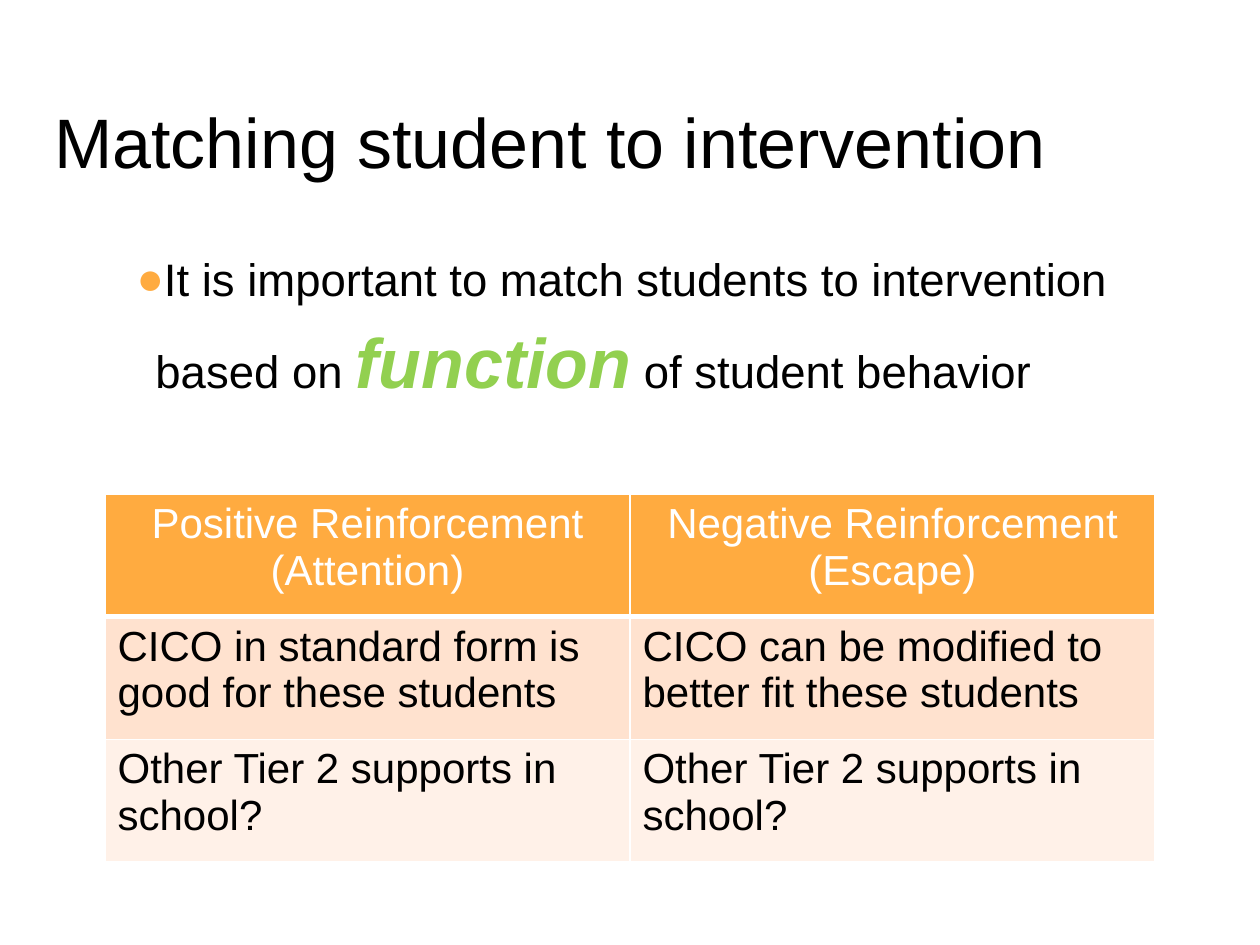
from typing import NamedTuple

from lxml.etree import SubElement
from pptx import Presentation
from pptx.dml.color import RGBColor
from pptx.enum.text import MSO_ANCHOR, MSO_AUTO_SIZE, PP_ALIGN
from pptx.oxml.ns import qn
from pptx.util import Inches, Pt

WIDE, HIGH = 10, 7.5
FONT = "Arial"
BLACK, WHITE, ORANGE, GREEN = "000000", "FFFFFF", "FFAB40", "92D050"
LEFT = 1 / 12


class Box(NamedTuple):
    left: float
    top: float
    width: float
    height: float


class Piece(NamedTuple):
    text: str
    size: float
    hue: str = BLACK
    strong: bool = False


class Band(NamedTuple):
    cells: tuple[str, str]
    fill: str
    hue: str
    align: PP_ALIGN
    base: float


TITLE = Box(0.033, 0.04, 0.917, 1 / 6)
BODY = Box(LEFT, 0.244, 0.85, 2 / 3)
GRID = Box(LEFT, 0.523, 1 - 2 * LEFT, 0.389)

POINT = (
    Piece("It is important to match students to intervention based on ", 26),
    Piece("function", 40, GREEN, True),
    Piece(" of student behavior", 26),
)
BANDS = (
    Band(("Positive Reinforcement (Attention)", "Negative Reinforcement (Escape)"),
         ORANGE, WHITE, PP_ALIGN.CENTER, 3),
    Band(("CICO in standard form is good for these students",
          "CICO can be modified to better fit these students"),
         "FFE2CF", BLACK, PP_ALIGN.LEFT, 1),
    Band(("Other Tier 2 supports in school?",) * 2,
         "FFF1E8", BLACK, PP_ALIGN.LEFT, 1),
)


def color(code: str) -> RGBColor:
    return RGBColor.from_string(code)


def frame(box: Box) -> tuple:
    return (Inches(box.left * WIDE), Inches(box.top * HIGH),
            Inches(box.width * WIDE), Inches(box.height * HIGH))


def write(para, pieces: tuple[Piece, ...]) -> None:
    for piece in pieces:
        run = para.add_run()
        run.text = piece.text
        font = run.font
        font.name, font.size = FONT, Pt(piece.size)
        font.bold = font.italic = piece.strong
        font.color.rgb = color(piece.hue)


def place(shape, box: Box, anchor: MSO_ANCHOR):
    shape.left, shape.top, shape.width, shape.height = frame(box)
    text = shape.text_frame
    text.word_wrap, text.auto_size = True, MSO_AUTO_SIZE.NONE
    text.vertical_anchor = anchor
    text.margin_left = text.margin_right = Inches(0.1)
    text.margin_top = text.margin_bottom = Inches(0.1)
    para = text.paragraphs[0]
    para.alignment = PP_ALIGN.LEFT
    para.space_before = Pt(0)
    return para


def bullet(para, hue: str) -> None:
    props = para._p.get_or_add_pPr()
    props.set("marL", str(Inches(0.3)))
    props.set("indent", str(Inches(-0.15)))
    tint = SubElement(props, qn("a:buClr"))
    SubElement(tint, qn("a:srgbClr"), val=hue)
    SubElement(props, qn("a:buFont"), typeface=FONT)
    SubElement(props, qn("a:buChar"), char="●")


def border(cell, base: float) -> None:
    props = cell._tc.get_or_add_tcPr()
    for side, width in (("L", 1), ("R", 1), ("T", 1), ("B", base)):
        line = SubElement(props, qn(f"a:ln{side}"), w=str(Pt(width)))
        fill = SubElement(line, qn("a:solidFill"))
        SubElement(fill, qn("a:srgbClr"), val=WHITE)


def chart(slide, box: Box, bands: tuple[Band, ...]) -> None:
    table = slide.shapes.add_table(len(bands), 2, *frame(box)).table
    for row, band in enumerate(bands):
        for col, text in enumerate(band.cells):
            cell = table.cell(row, col)
            border(cell, band.base)
            cell.fill.solid()
            cell.fill.fore_color.rgb = color(band.fill)
            para = cell.text_frame.paragraphs[0]
            para.alignment = band.align
            write(para, (Piece(text, 24, band.hue),))


def main() -> None:
    deck = Presentation()
    deck.slide_width, deck.slide_height = Inches(WIDE), Inches(HIGH)
    slide = deck.slides.add_slide(deck.slide_layouts[1])
    slide.background.fill.solid()
    slide.background.fill.fore_color.rgb = color(WHITE)
    head = place(slide.shapes.title, TITLE, MSO_ANCHOR.BOTTOM)
    write(head, (Piece("Matching student to intervention", 40),))
    item = place(slide.placeholders[1], BODY, MSO_ANCHOR.TOP)
    bullet(item, ORANGE)
    item.line_spacing, item.space_after = 1.15, Pt(16)
    write(item, POINT)
    chart(slide, GRID, BANDS)
    deck.save("out.pptx")


if __name__ == "__main__":
    main()
